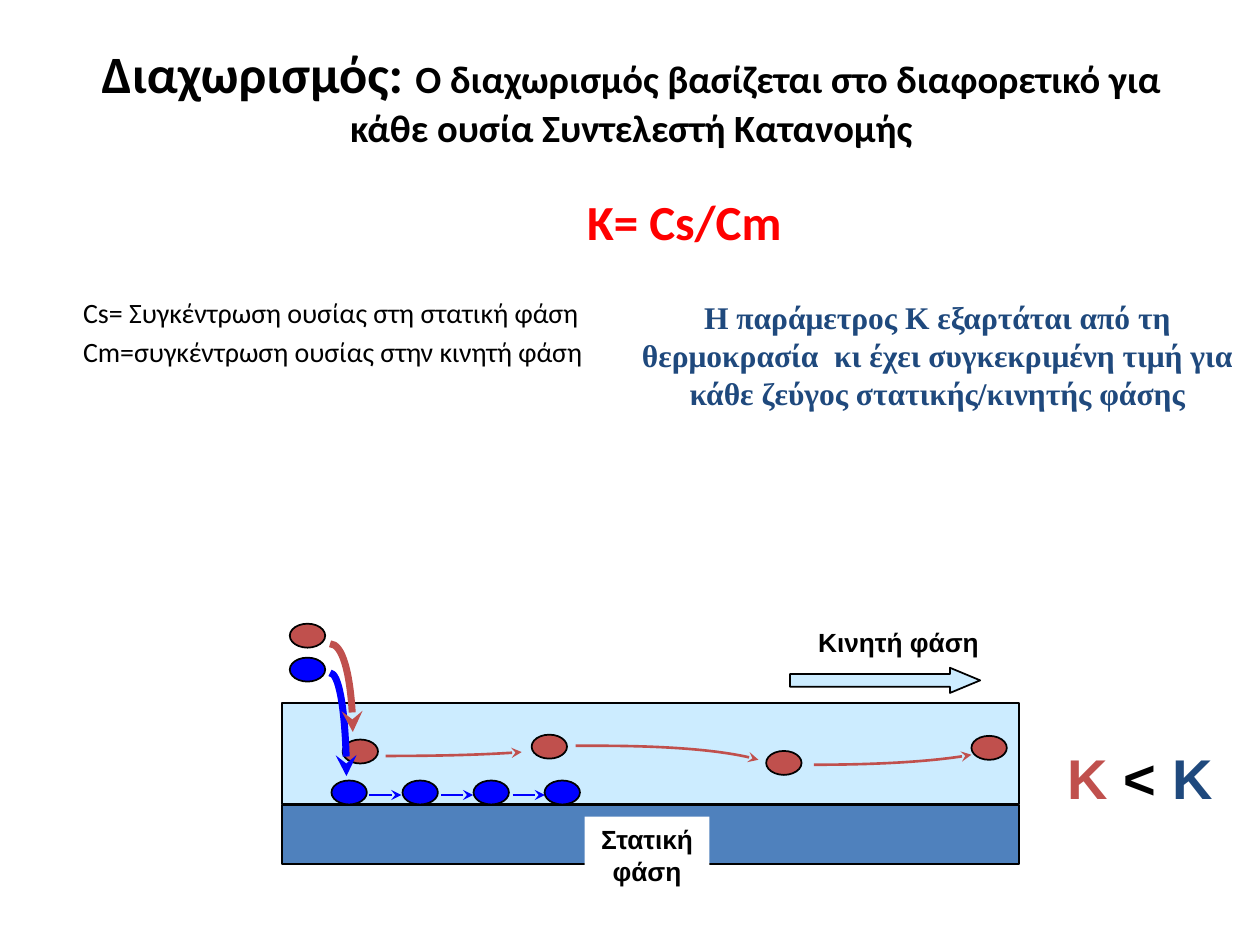
from lxml.etree import SubElement
from pptx import Presentation
from pptx.dml.color import RGBColor
from pptx.enum.shapes import MSO_CONNECTOR, MSO_SHAPE
from pptx.enum.text import MSO_ANCHOR, MSO_AUTO_SIZE, PP_ALIGN
from pptx.oxml.ns import qn
from pptx.util import Pt

BLACK, WHITE = "000000", "FFFFFF"
RED, BLUE, NAVY = "C0504D", "0000FF", "1F497D"
MOBILE, STATIONARY = "CCECFF", "4F81BD"
DOT_WIDTH, DOT_HEIGHT = 20.2, 13.7


def color(hex_string):
    return RGBColor.from_string(hex_string)


class SlideBuilder:
    heading_font = "Calibri"
    label_font = "Arial"

    def __init__(self, slide):
        self.slide = slide
        self.shapes = slide.shapes

    def style(self, run, size, hue, font, bold=True):
        run.font.size = Pt(size)
        run.font.name = font
        run.font.bold = bold
        run.font.color.rgb = color(hue)

    def place(self, holder, left, top, width, height):
        holder.left, holder.top = Pt(left), Pt(top)
        holder.width, holder.height = Pt(width), Pt(height)
        holder.text_frame.auto_size = MSO_AUTO_SIZE.NONE

    def add_runs(self, paragraph, pieces, font, align=PP_ALIGN.CENTER):
        paragraph.alignment = align
        for text, size, hue in pieces:
            run = paragraph.add_run()
            run.text = text
            self.style(run, size, hue, font)

    def title(self, box, pieces):
        heading = self.shapes.title
        self.place(heading, *box)
        heading.text_frame.vertical_anchor = MSO_ANCHOR.MIDDLE
        self.add_runs(heading.text_frame.paragraphs[0], pieces, self.heading_font)

    def body(self, box, lines):
        holder = self.slide.placeholders[1]
        self.place(holder, *box)
        frame = holder.text_frame
        frame.text = "\n".join(line[0] for line in lines)
        for paragraph, (_, size, hue, bold, indent, gap) in zip(frame.paragraphs, lines):
            properties = paragraph._p.get_or_add_pPr()
            properties.set("marL", str(Pt(indent)))
            properties.set("indent", "0")
            SubElement(properties, qn("a:buNone"))
            paragraph.space_before = Pt(gap)
            self.style(paragraph.runs[0], size, hue, self.heading_font, bold)

    def text(self, box, pieces, font=label_font, wrap=True):
        frame = self.shapes.add_textbox(*map(Pt, box)).text_frame
        frame.word_wrap = wrap
        self.add_runs(frame.paragraphs[0], pieces, font)
        return frame

    def shape(self, kind, box, fill, outlined=True):
        figure = self.shapes.add_shape(kind, *map(Pt, box))
        figure.shadow.inherit = False
        figure.fill.solid()
        figure.fill.fore_color.rgb = color(fill)
        if outlined:
            figure.line.color.rgb = color(BLACK)
            figure.line.width = Pt(1)
        else:
            figure.line.fill.background()
        return figure

    def dot(self, left, top, fill):
        self.shape(MSO_SHAPE.OVAL, (left, top, DOT_WIDTH, DOT_HEIGHT), fill)

    def arrow_line(self, stroke, hue, width):
        stroke.line.color.rgb = color(hue)
        stroke.line.width = Pt(width)
        outline = stroke._element.spPr.find(qn("a:ln"))
        SubElement(outline, qn("a:tailEnd"), type="stealth")

    def arrow(self, left, right, y, hue):
        step = self.shapes.add_connector(
            MSO_CONNECTOR.STRAIGHT, Pt(left), Pt(y), Pt(right), Pt(y))
        self.arrow_line(step, hue, 1.5)
        SubElement(step._element.spPr, qn("a:effectLst"))

    def curve(self, points, hue, width):
        start, *rest = [(Pt(x), Pt(y)) for x, y in points]
        builder = self.shapes.build_freeform(*start)
        builder.add_line_segments(rest, close=False)
        route = builder.convert_to_shape()
        outline = next(route._element.iter(qn("a:path")))
        segments = outline.findall(qn("a:lnTo"))
        for first in range(0, len(segments), 3):
            bezier = SubElement(outline, qn("a:cubicBezTo"))
            for segment in segments[first:first + 3]:
                bezier.append(segment[0])
                outline.remove(segment)
        route.shadow.inherit = False
        route.fill.background()
        self.arrow_line(route, hue, width)


def main():
    deck = Presentation()
    deck.slide_width, deck.slide_height = Pt(720), Pt(540)
    page = SlideBuilder(deck.slides.add_slide(deck.slide_layouts[1]))

    page.title((36.7, 9.4, 648, 90), [
        ("Διαχωρισμός: ", 30, BLACK),
        ("Ο διαχωρισμός βασίζεται στο διαφορετικό για κάθε ουσία Συντελεστή Κατανομής",
         22, BLACK)])
    page.body((40.3, 105.8, 648, 157.7), [
        ("Κ= Cs/Cm", 28, "FF0000", True, 288, 0),
        ("Cs= Συγκέντρωση ουσίας στη στατική φάση", 16, BLACK, False, 0, 26),
        ("Cm=συγκέντρωση ουσίας στην κινητή φάση", 16, BLACK, False, 0, 3.2)])

    page.shape(MSO_SHAPE.RECTANGLE, (161.3, 460.1, 421.2, 33.8), STATIONARY)
    page.dot(165.6, 356.4, RED)
    page.dot(165.6, 375.8, BLUE)
    page.shape(MSO_SHAPE.RECTANGLE, (161.3, 401.8, 421.2, 57.6), MOBILE)
    for index in range(4):
        page.dot(189.4 + 40.6 * index, 446, BLUE)
    for left, top in [(195.8, 422.6), (303.8, 419.8), (437.8, 429.1), (555.1, 420.5)]:
        page.dot(left, top, RED)

    page.curve([(188.6, 384.5), (193.7, 384.5), (198, 410.4), (198, 443.5)], BLUE, 4)
    page.curve([(188.6, 367.9), (195.8, 367.9), (201.6, 391), (201.6, 418.3)], RED, 4)
    red_routes = [
        [(220.3, 432), (249.8, 432), (277.9, 431.3), (298.1, 429.8)],
        [(329, 426.2), (333.4, 426.2), (337.7, 426.2), (342, 426.2),
         (380.9, 426.2), (416.2, 429.1), (433.4, 434.2)],
        [(465.1, 437), (501.1, 437), (535.7, 434.9), (555.1, 431.3)],
    ]
    for route in red_routes:
        page.curve(route, RED, 1.5)

    stationary_label = page.shape(
        MSO_SHAPE.RECTANGLE, (334.1, 466.6, 71.3, 43.9), WHITE, outlined=False)
    stationary_label.text_frame.word_wrap = True
    page.add_runs(stationary_label.text_frame.paragraphs[0],
                  [("Στατική φάση", 15, BLACK)], page.label_font)

    mobile_label = page.text((450, 354.2, 118.8, 25.2), [("Κινητή φάση", 15, BLACK)])
    mobile_label.margin_left = Pt(17.5)
    mobile_label.margin_right = Pt(0)
    mobile_label.paragraphs[0].alignment = PP_ALIGN.LEFT

    page.text((602.6, 421.2, 97.9, 46.1),
              [("K ", 32, RED), ("< ", 32, BLACK), ("K", 32, NAVY)], wrap=False)

    for index in range(3):
        left = 211 + 41 * index
        page.arrow(left, left + 18.4, 454.3, BLUE)
    flow = page.shape(MSO_SHAPE.RIGHT_ARROW, (451.4, 381.6, 108.7, 14.4), MOBILE)
    flow.adjustments[0] = 0.5
    flow.adjustments[1] = 1.2

    page.text((351.4, 167, 368.6, 72.7), [
        ("Η παράμετρος Κ εξαρτάται από τη θερμοκρασία  κι έχει συγκεκριμένη τιμή "
         "για κάθε ζεύγος στατικής/κινητής φάσης", 18, NAVY)], font="Times New Roman")

    deck.save("out.pptx")


if __name__ == "__main__":
    main()
